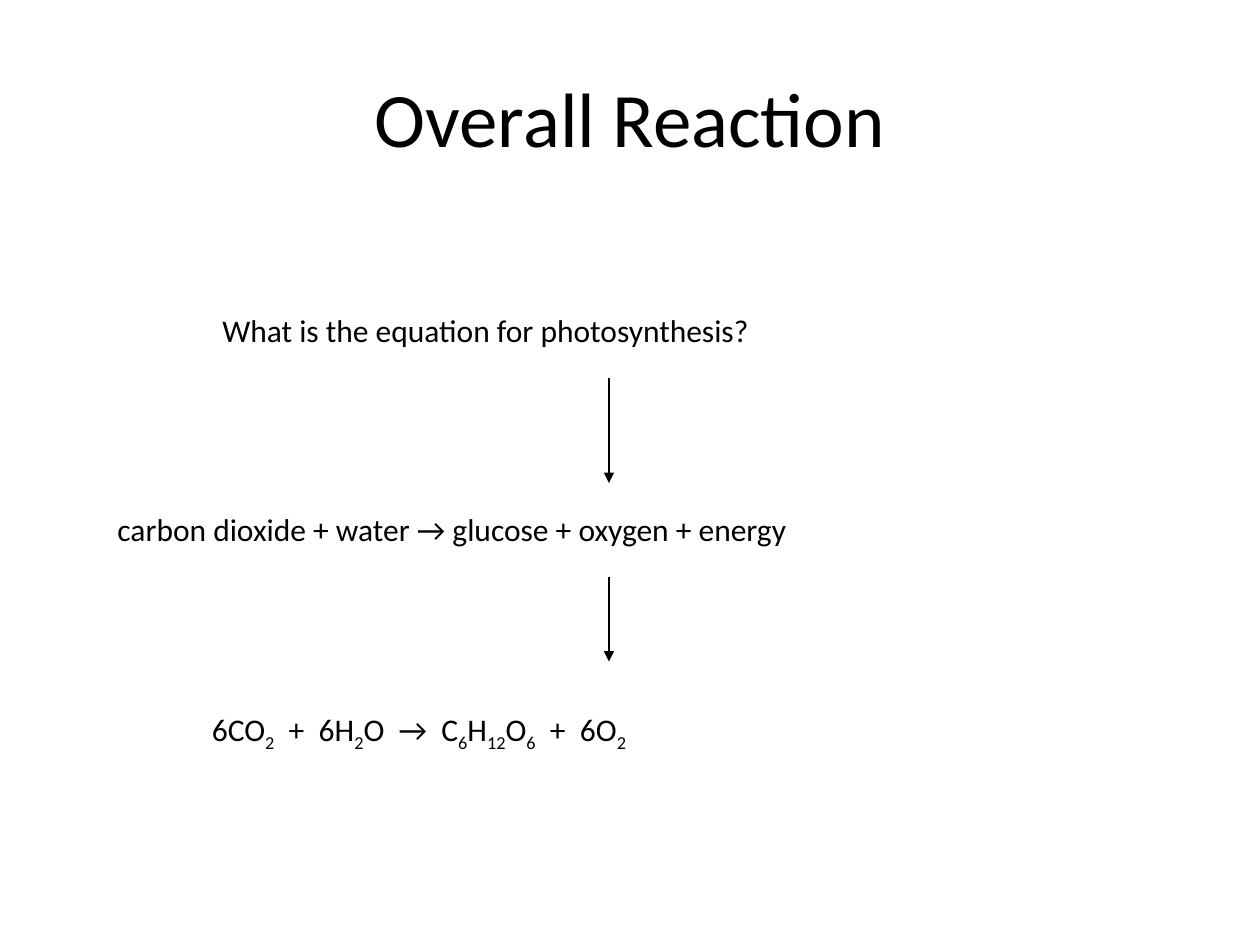
import pptx
import pptx.util
import pptx.dml.color
import pptx.enum.shapes
import pptx.enum.text
import pptx.oxml
import pptx.oxml.ns

THEME = {
    "font": "Calibri",
    "ink": pptx.dml.color.RGBColor(0, 0, 0),
    "title": pptx.util.Pt(44),
    "body": pptx.util.Pt(18),
    "line": pptx.util.Pt(0.75),
    "subscript": "-25000",
}

deck = pptx.Presentation()
deck.slide_width = pptx.util.Inches(10)
deck.slide_height = pptx.util.Inches(7.5)
slide = deck.slides.add_slide(deck.slide_layouts[6])

# Grid of 120 columns by 90 rows
column = deck.slide_width / 120
row = deck.slide_height / 90


def add_line_of_text(left, top, width, height, pieces, size, frame_format):
    """Write the pieces in one paragraph; every second piece is a subscript."""
    box = slide.shapes.add_textbox(
        int(left * column), int(top * row), int(width * column), int(height * row))
    for key, value in frame_format.items():
        setattr(box.text_frame, key, value)
    paragraph = box.text_frame.paragraphs[0]
    for index, piece in enumerate(pieces):
        run = paragraph.add_run()
        run.text = piece
        for key, value in {"name": THEME["font"], "size": size}.items():
            setattr(run.font, key, value)
        run.font.color.rgb = THEME["ink"]
        if index % 2:
            run.font._element.set("baseline", THEME["subscript"])
    return paragraph


# Title
title = add_line_of_text(
    6, 3.6, 108, 15, ["Overall Reaction"], THEME["title"],
    {"word_wrap": True, "vertical_anchor": pptx.enum.text.MSO_ANCHOR.MIDDLE})
title.alignment = pptx.enum.text.PP_ALIGN.CENTER

# Question, word equation and chemical equation
formula = ["6CO", "2", "  +  6H", "2", "O  →  C", "6", "H", "12", "O", "6", "  +  6O", "2"]
steps = [
    (20, 29, 90, 6, ["What is the equation for photosynthesis?"]),
    (10, 48, 100, 6, ["carbon dioxide + water → glucose + oxygen + energy"]),
    (19, 67, 94, 4.8, formula),
]
for left, top, width, height, pieces in steps:
    add_line_of_text(
        left, top, width, height, pieces, THEME["body"],
        {"word_wrap": True, "auto_size": pptx.enum.text.MSO_AUTO_SIZE.SHAPE_TO_FIT_TEXT})

# Arrows from each step to the next
arrow_x = int(58 * column)
for start, end in [(36, 46), (55, 63)]:
    arrow = slide.shapes.add_connector(
        pptx.enum.shapes.MSO_CONNECTOR.STRAIGHT,
        arrow_x, int(start * row), arrow_x, int(end * row))
    arrow.line.color.rgb = THEME["ink"]
    arrow.line.width = THEME["line"]
    head = pptx.oxml.parse_xml(
        f'<a:tailEnd {pptx.oxml.ns.nsdecls("a")} type="triangle"/>')
    arrow.line._get_or_add_ln().append(head)
    arrow._element.spPr.append(
        pptx.oxml.parse_xml(f'<a:effectLst {pptx.oxml.ns.nsdecls("a")}/>'))

deck.save("out.pptx")
